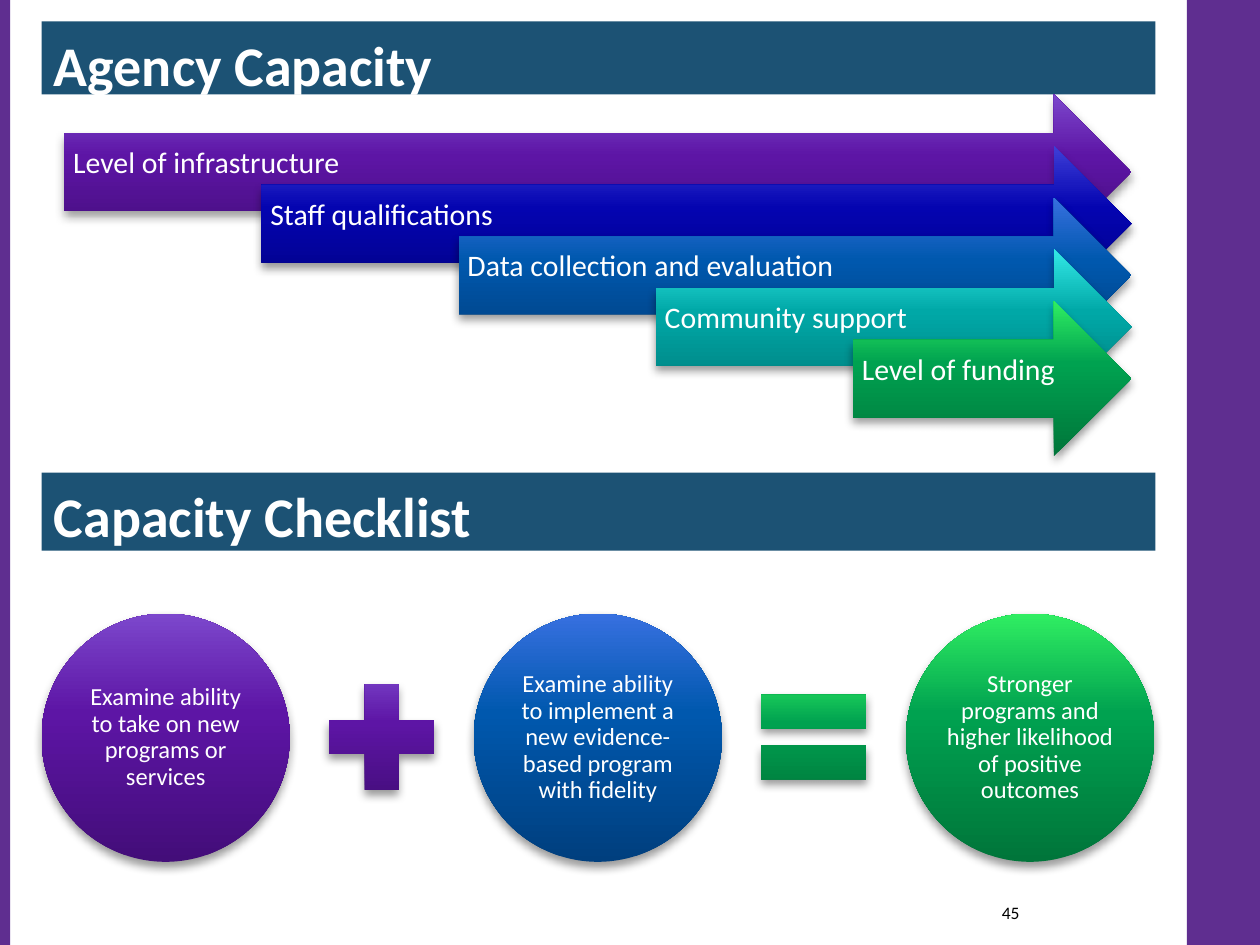
from copy import deepcopy

from pptx import Presentation
from pptx.dml.color import RGBColor
from pptx.enum.shapes import MSO_SHAPE
from pptx.enum.text import MSO_ANCHOR, PP_ALIGN
from pptx.oxml import parse_xml
from pptx.oxml.ns import nsdecls, qn
from pptx.util import Inches, Pt

RECT, OVAL, ARROW = MSO_SHAPE.RECTANGLE, MSO_SHAPE.OVAL, MSO_SHAPE.RIGHT_ARROW
PLUS, EQUAL = MSO_SHAPE.MATH_PLUS, MSO_SHAPE.MATH_EQUAL
TOP, MIDDLE = MSO_ANCHOR.TOP, MSO_ANCHOR.MIDDLE
LEFT, CENTER, RIGHT = PP_ALIGN.LEFT, PP_ALIGN.CENTER, PP_ALIGN.RIGHT

COLORS = {"edge": "5F2E90", "header": "1C5274", "white": "FFFFFF", "black": "000000"}
GRADIENTS = {
    "purple": ("430D79", "5D15A5", "7C47CC"),
    "navy": ("010181", "0404B0", "3E3ED7"),
    "blue": ("003F7E", "0058AE", "3770E0"),
    "teal": ("007A79", "00A8A7", "33E8E6"),
    "green": ("00753A", "00A250", "30EE62"),
}
SHADOW = (
    f'<a:effectLst {nsdecls("a")}>'
    f'<a:outerShdw blurRad="{Pt(5.2)}" dist="{Pt(3)}" dir="5400000" rotWithShape="0">'
    '<a:srgbClr val="000000"><a:alpha val="40000"/></a:srgbClr>'
    "</a:outerShdw></a:effectLst>"
)

prs = Presentation()
prs.slide_width, prs.slide_height = Inches(10), Inches(7.5)
s = prs.slides.add_slide(prs.slide_layouts[6])


def add_shape(kind, box, color):
    sp = s.shapes.add_shape(kind, *map(Inches, box))
    sp.line.fill.background()
    sp.shadow.inherit = False
    if color in COLORS:
        sp.fill.solid()
        sp.fill.fore_color.rgb = RGBColor.from_string(COLORS[color])
        return
    sp.fill.gradient()
    sp.fill.gradient_angle = 90
    spPr = sp._element.spPr
    gs = spPr.find(".//" + qn("a:gs"))
    gs.addnext(deepcopy(gs))
    for stop, position, rgb in zip(sp.fill.gradient_stops, (0, 0.6, 1), GRADIENTS[color]):
        stop.position = position
        stop.color.rgb = RGBColor.from_string(rgb)
    spPr.replace(spPr.find(qn("a:effectLst")), parse_xml(SHADOW))


def add_text(text, box, size, insets, anchor=MIDDLE, align=LEFT, color="white", bold=False, spacing=0.9):
    tf = s.shapes.add_textbox(*map(Inches, box)).text_frame
    tf.word_wrap = True
    tf.vertical_anchor = anchor
    tf.margin_left, tf.margin_top, tf.margin_right, tf.margin_bottom = map(Inches, insets)
    p = tf.paragraphs[0]
    p.text = text
    p.alignment = align
    p.line_spacing = spacing
    p.font.name = "Calibri"
    p.font.size = Pt(size)
    p.font.bold = bold
    p.font.color.rgb = RGBColor.from_string(COLORS[color])


add_shape(RECT, (9.42, 0, 0.58, 7.5), "edge")
add_shape(RECT, (0, 0, 0.08, 7.5), "edge")

for title, top, height in (("Agency Capacity", 0.17, 0.58), ("Capacity Checklist", 3.75, 0.62)):
    box = (0.33, top, 8.84, height)
    add_shape(RECT, box, "header")
    add_text(title, box, 32, (0.1, 0.07, 0.1, 0.05), TOP, bold=True, spacing=1)

capacities = (
    ("Level of infrastructure", "purple"),
    ("Staff qualifications", "navy"),
    ("Data collection and evaluation", "blue"),
    ("Community support", "teal"),
    ("Level of funding", "green"),
)
arrow_right, arrow_height = 8.98, 1.23
for i, (label, color) in enumerate(capacities):
    left, top = 0.51 + i * 6.26 / 4, 0.75 + i * 0.41
    width = arrow_right - left
    add_shape(ARROW, (left, top, width, arrow_height), color)
    add_text(label, (left, top + arrow_height / 4, width - arrow_height / 4, arrow_height / 2),
             17, (0.07, 0.07, 0.28, 0.2))

steps = (
    ("Examine ability to take on new programs or services", "purple"),
    ("Examine ability to implement a new evidence-based program with fidelity", "blue"),
    ("Stronger programs and higher likelihood of positive outcomes", "green"),
)
pitch, diameter, inset = 3.43, 1.97, 0.29
for i, (label, color) in enumerate(steps):
    left, top = 0.33 + i * pitch, 4.87
    inner = diameter - 2 * inset
    add_shape(OVAL, (left, top, diameter, diameter), color)
    add_text(label, (left + inset, top + inset, inner, inner), 14, (0.02,) * 4, align=CENTER)

for i, (kind, color) in enumerate(((PLUS, "purple"), (EQUAL, "green"))):
    add_shape(kind, (2.46 + i * pitch, 5.28, 1.14, 1.14), color)

add_text("45", (7.11, 7.08, 1.08, 0.33), 10, (0.1, 0.05, 0.1, 0.05),
         align=RIGHT, color="black", spacing=1)

prs.save("out.pptx")
